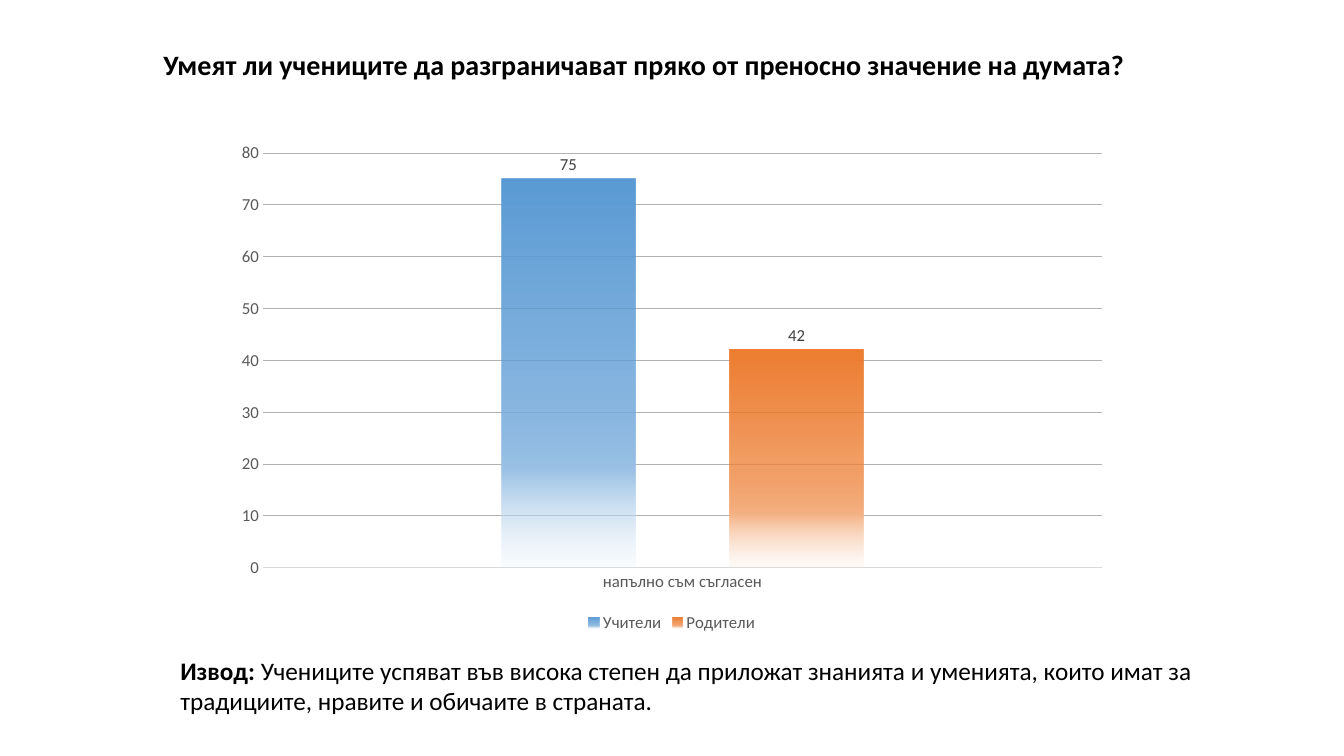
from lxml import etree
from pptx import Presentation
from pptx.chart.data import CategoryChartData as Data
from pptx.dml.color import RGBColor
from pptx.enum.chart import XL_CHART_TYPE as Kind, XL_LABEL_POSITION as Spot
from pptx.enum.chart import XL_LEGEND_POSITION as Side, XL_TICK_MARK as Tick
from pptx.enum.text import MSO_ANCHOR as Anchor, PP_ALIGN as Align
from pptx.oxml.ns import qn
from pptx.util import Inches, Pt

FACE = "Calibri"
tint = RGBColor.from_string


def write(para, text, size=18, bold=False, color="000000"):
    run = para.add_run()
    run.text = text
    style(run.font, size, color)
    run.font.bold = bold


def style(font, size, color):
    font.name, font.size = FACE, Pt(size)
    font.color.rgb = tint(color)


deck = Presentation()
deck.slide_width, deck.slide_height = Inches(13.33), Inches(7.5)
slide = deck.slides.add_slide(deck.slide_layouts[5])

# Title and conclusion
title = slide.shapes.title
title.left, title.top = Inches(1.52), Inches(0.42)
title.width, title.height = Inches(10.64), Inches(0.44)
note = slide.shapes.add_textbox(Inches(1.69), Inches(6.45), Inches(10.46), Inches(0.71))
for box in (title, note):
    frame = box.text_frame
    frame.word_wrap = True
    frame.vertical_anchor = Anchor.TOP
    frame.paragraphs[0].alignment = Align.LEFT
write(title.text_frame.paragraphs[0],
      "Умеят ли учениците да разграничават пряко от преносно значение на думата?",
      size=20, bold=True)
para = note.text_frame.paragraphs[0]
write(para, "Извод: ", bold=True)
write(para, "Учениците успяват във висока степен да приложат знанията и уменията, "
            "които имат за традициите, нравите и обичаите в страната.")

# Chart
data = Data()
data.categories = ["напълно съм съгласен"]
data.add_series("Учители", [75])
data.add_series("Родители", [42])
chart = slide.shapes.add_chart(Kind.COLUMN_CLUSTERED, Inches(2.22), Inches(1.32),
                               Inches(8.89), Inches(5), data).chart
style(chart.font, 12, "595959")
chart.has_title = False
chart.has_legend = True
chart.legend.position = Side.BOTTOM
chart.legend.include_in_layout = False
style(chart.legend.font, 12, "595959")

cats, vals = chart.category_axis, chart.value_axis
for axis in (cats, vals):
    axis.major_tick_mark = axis.minor_tick_mark = Tick.NONE
    style(axis.tick_labels.font, 12, "595959")
vals.minimum_scale, vals.maximum_scale, vals.major_unit = 0, 80, 10
vals.format.line.fill.background()
for line, color in ((cats.format.line, "D9D9D9"),
                    (vals.major_gridlines.format.line, "B3B3B3")):
    line.color.rgb = tint(color)
    line.width = Pt(0.75)

plot = chart.plots[0]
plot.gap_width, plot.overlap = 355, -70
plot.vary_by_categories = False

# Bars fade from full colour at the top to nearly clear at the foot
fades = [("5B9BD5", "9DC3E6", "DEEBF7"), ("ED7D31", "F4B183", "FBE5D6")]
for bar, (full, mid, pale) in zip(plot.series, fades):
    bar.invert_if_negative = False
    grad = etree.SubElement(bar.format.fill._xPr, qn("a:gradFill"))
    stops = etree.SubElement(grad, qn("a:gsLst"))
    for pos, color, alpha in ((0, full, 100), (51, full, 75), (75, mid, 100), (100, pale, 15)):
        stop = etree.SubElement(stops, qn("a:gs"), pos=str(pos * 1000))
        shade = etree.SubElement(stop, qn("a:srgbClr"), val=color)
        if alpha < 100:
            etree.SubElement(shade, qn("a:alpha"), val=str(alpha * 1000))
    etree.SubElement(grad, qn("a:lin"), ang=str(90 * 60000), scaled="0")
    tags = bar.data_labels
    tags.show_value = True
    tags.position = Spot.OUTSIDE_END
    style(tags.font, 12, "404040")

deck.save("out.pptx")
